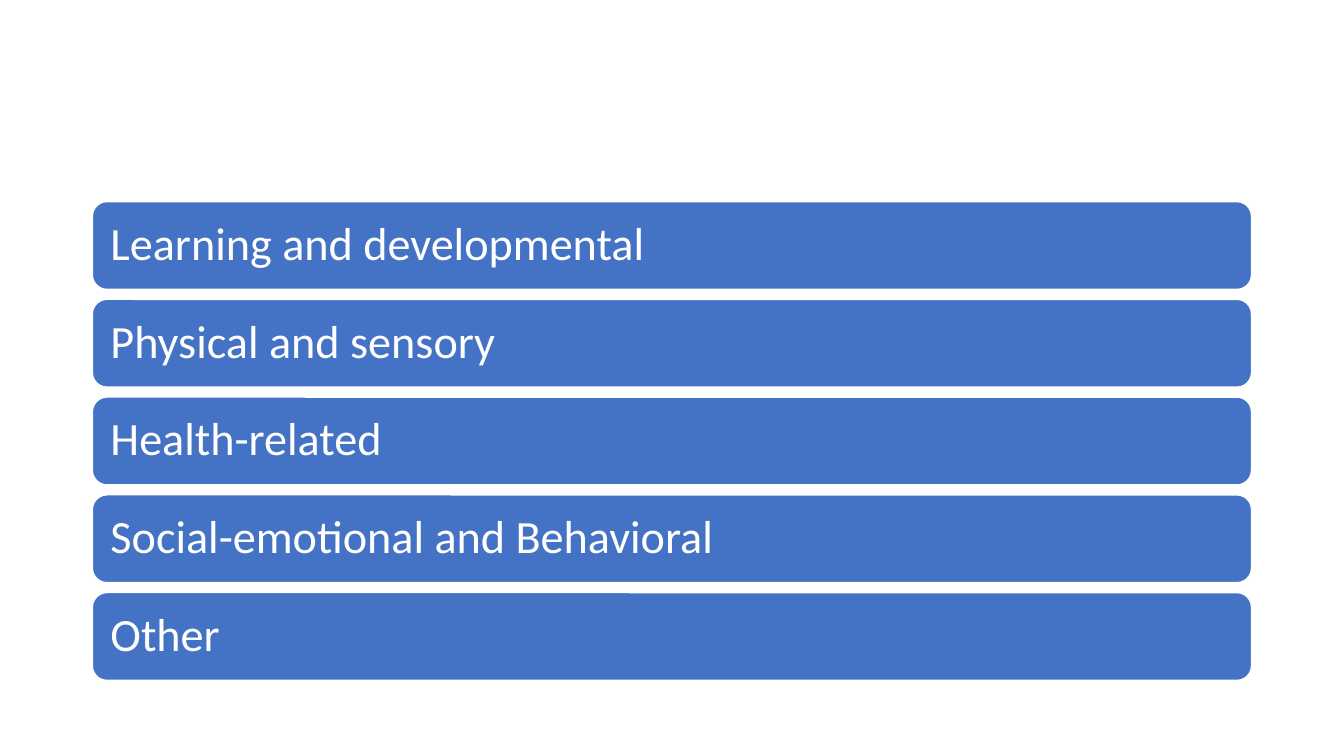
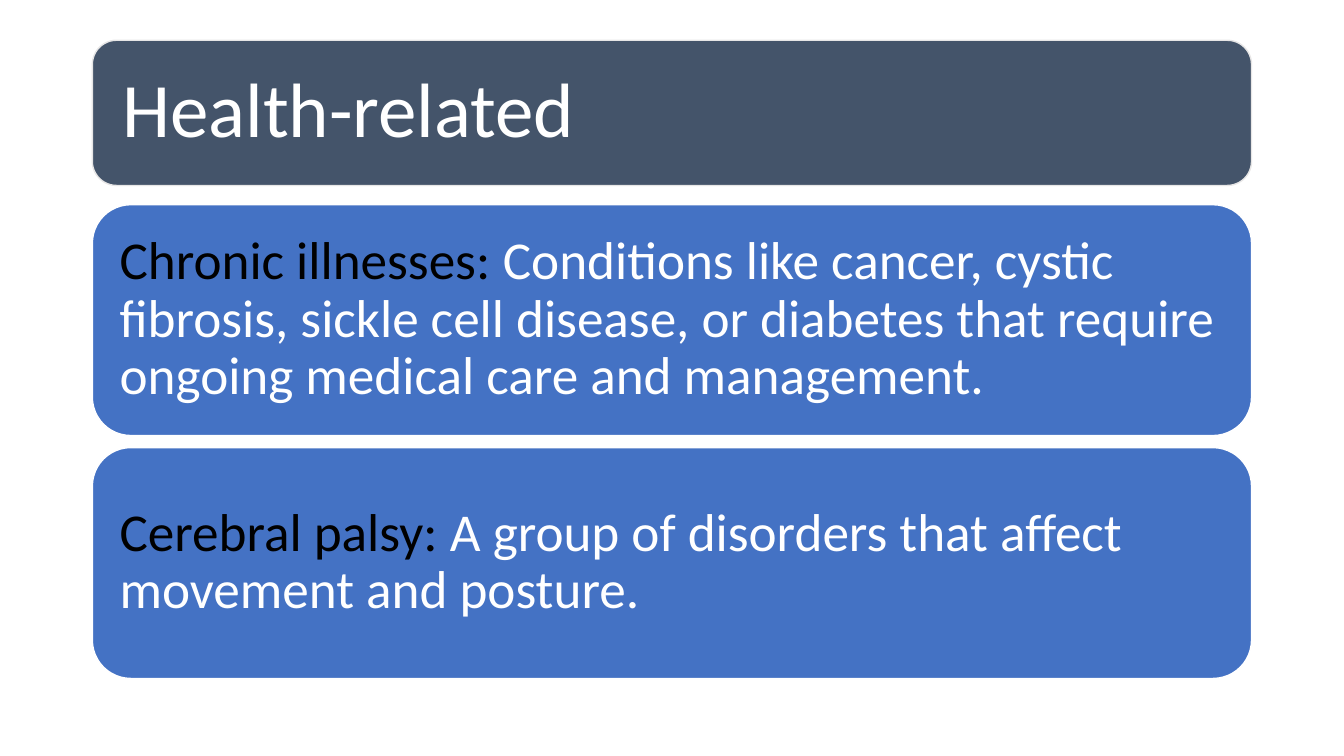
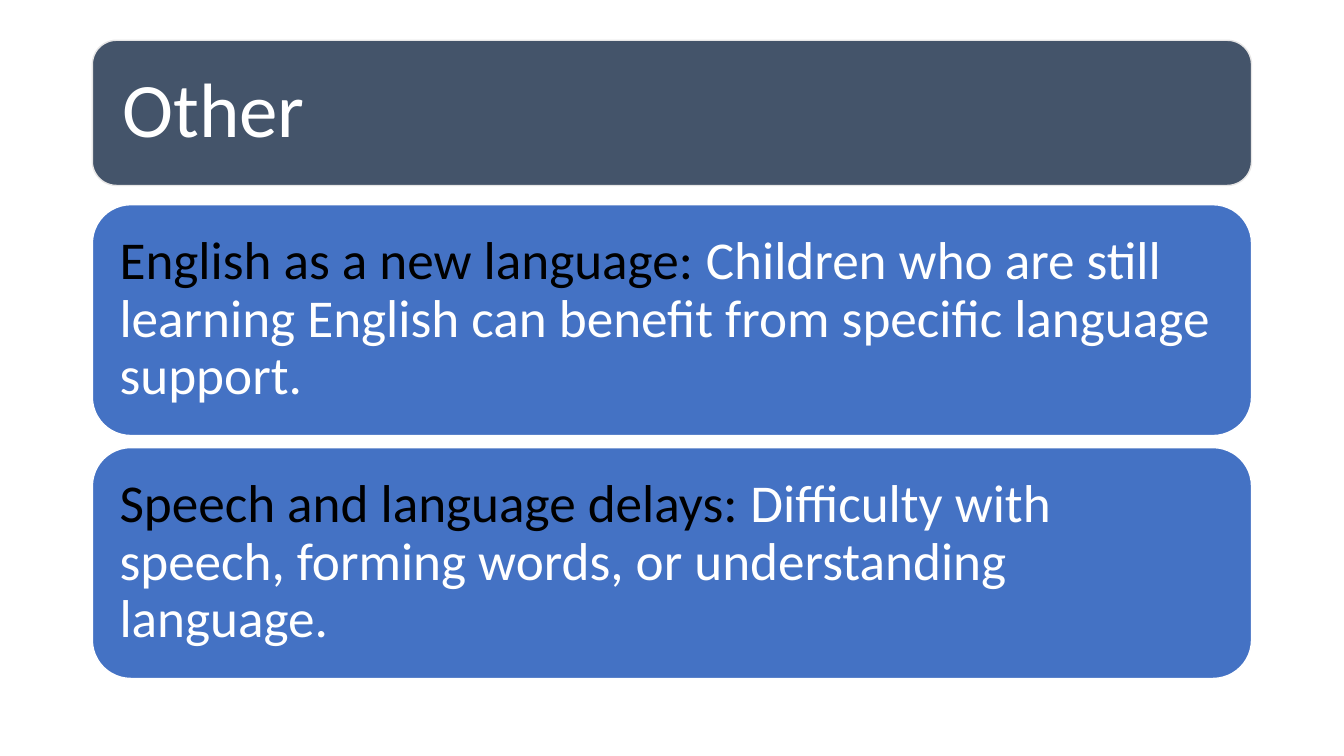
from pptx import Presentation
from pptx.dml.color import RGBColor
from pptx.enum import shapes, text
from pptx.util import Pt

WHITE = RGBColor(0xFF, 0xFF, 0xFF)
BLACK = RGBColor(0x00, 0x00, 0x00)
BLUE = RGBColor(0x44, 0x72, 0xC4)
SLATE = RGBColor(0x44, 0x54, 0x6A)
PALE_GRAY = RGBColor(0xE7, 0xE6, 0xE6)

FONT = "Calibri"
INSET_RATIO = 0.3  # panel padding as a share of the text size

# Boxes are left, top, width, height in points
TITLE_BOX = (66, 28.8, 828, 103.7)
CATEGORY_BOX = (66, 144, 828, 342)
CARD_BOX = (66, 146.2, 828, 338.4)

CATEGORIES = (
    "Learning and developmental",
    "Physical and sensory",
    "Health-related",
    "Social-emotional and Behavioral",
    "Other",
)

TOPICS = (
    ("Health-related", (
        ("Chronic illnesses: ",
         "Conditions like cancer, cystic fibrosis, sickle cell disease, "
         "or diabetes that require ongoing medical care and management."),
        ("Cerebral palsy: ",
         "A group of disorders that affect movement and posture."),
    )),
    ("Other", (
        ("English as a new language: ",
         "Children who are still learning English can benefit from "
         "specific language support."),
        ("Speech and language delays: ",
         "Difficulty with speech, forming words, or understanding language."),
    )),
)


def set_attributes(target, values):
    for name, value in values.items():
        setattr(target, name, value)


def add_panel(slide, box, runs, size, fill=BLUE, line=WHITE):
    """Add a rounded panel holding one paragraph of (wording, colour) runs."""
    shape = slide.shapes.add_shape(
        shapes.MSO_SHAPE.ROUNDED_RECTANGLE, *(Pt(length) for length in box))
    shape.shadow.inherit = False
    shape.fill.solid()
    shape.fill.fore_color.rgb = fill
    shape.line.color.rgb = line
    shape.line.width = Pt(1)

    frame = shape.text_frame
    inset = Pt(size * INSET_RATIO)
    set_attributes(frame, {
        "word_wrap": True,
        "vertical_anchor": text.MSO_ANCHOR.MIDDLE,
        "margin_left": inset,
        "margin_top": inset,
        "margin_right": inset,
        "margin_bottom": inset,
    })
    paragraph = frame.paragraphs[0]
    set_attributes(paragraph, {
        "alignment": text.PP_ALIGN.LEFT,
        "line_spacing": 0.9,
    })
    for wording, color in runs:
        run = paragraph.add_run()
        run.text = wording
        set_attributes(run.font, {"name": FONT, "size": Pt(size)})
        run.font.color.rgb = color


def add_stack(slide, box, panels, gap, size):
    """Fill the box with equally tall panels, one below the other."""
    left, top, width, height = box
    panel_height = (height - gap * (len(panels) - 1)) / len(panels)
    for index, runs in enumerate(panels):
        panel_top = top + index * (panel_height + gap)
        add_panel(slide, (left, panel_top, width, panel_height), runs, size)


def add_category_slide(slide, categories):
    panels = [[(category, WHITE)] for category in categories]
    add_stack(slide, CATEGORY_BOX, panels, gap=7.1, size=33)


def add_topic_slide(slide, title, cards):
    add_panel(slide, TITLE_BOX, [(title, WHITE)], 55, SLATE, PALE_GRAY)
    panels = [[(term, BLACK), (meaning, WHITE)] for term, meaning in cards]
    add_stack(slide, CARD_BOX, panels, gap=8.64, size=38)


def main():
    presentation = Presentation()
    set_attributes(presentation,
                   {"slide_width": Pt(960), "slide_height": Pt(540)})
    blank = presentation.slide_layouts[6]
    add_category_slide(presentation.slides.add_slide(blank), CATEGORIES)
    for title, cards in TOPICS:
        add_topic_slide(presentation.slides.add_slide(blank), title, cards)
    presentation.save("out.pptx")


if __name__ == "__main__":
    main()
